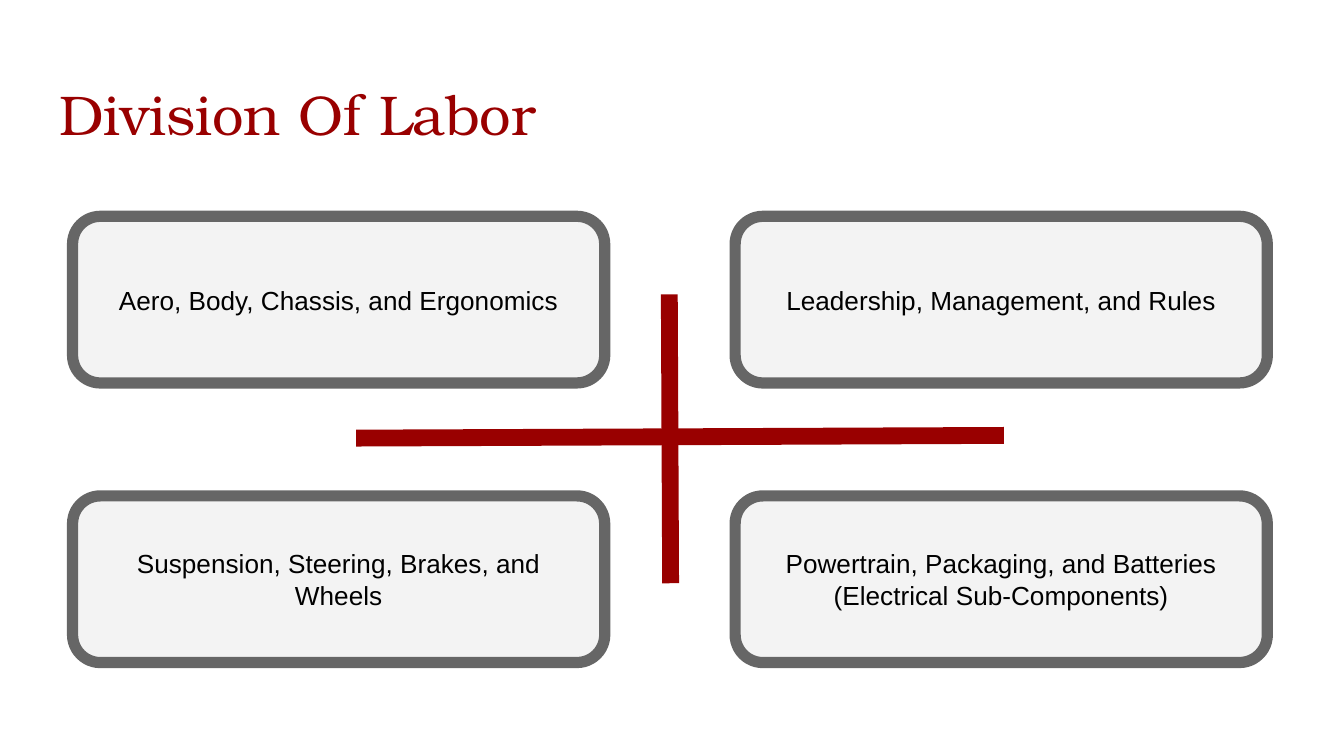
from itertools import product

from lxml.etree import SubElement
from pptx import Presentation
from pptx.dml.color import RGBColor
from pptx.enum.shapes import MSO_CONNECTOR, MSO_SHAPE
from pptx.enum.text import MSO_ANCHOR, MSO_AUTO_SIZE, PP_ALIGN
from pptx.oxml.ns import qn
from pptx.util import Inches, Pt

CRIMSON = RGBColor(0x99, 0x00, 0x00)
GRAY = RGBColor(0x66, 0x66, 0x66)
PALE = RGBColor(0xF3, 0xF3, 0xF3)
BLACK = RGBColor(0x00, 0x00, 0x00)

COLUMNS, ROWS = 100, 56.25
CELL = Inches(0.1)

TEAMS = [
    ["Aero, Body, Chassis, and Ergonomics"],
    ["Leadership, Management, and Rules"],
    ["Suspension, Steering, Brakes, and Wheels"],
    ["Powertrain, Packaging, and Batteries", "(Electrical Sub-Components)"],
]
TEAM_LEFTS = (5.4, 54.7)
TEAM_TOPS = (16.1, 36.9)


def cells(*counts):
    """Turn counts of grid cells into lengths."""
    return [round(count * CELL) for count in counts]


def write(frame, lines, *, font, size, color, align, anchor):
    frame.word_wrap = True
    frame.auto_size = MSO_AUTO_SIZE.NONE
    frame.vertical_anchor = anchor
    frame.margin_left = frame.margin_right = CELL
    frame.margin_top = frame.margin_bottom = CELL
    for index, line in enumerate(lines):
        para = frame.add_paragraph() if index else frame.paragraphs[0]
        para.alignment = align
        span = para.add_run()
        span.text = line
        span.font.name = font
        span.font.size = Pt(size)
        span.font.color.rgb = color


class SlideBuilder:
    """Style and current slide; positions are in grid columns and rows."""

    title_font = "TeX Gyre Bonum"
    body_font = "Arial"

    def __init__(self, deck):
        self.page = deck.slides.add_slide(deck.slide_layouts[5])

    def title(self, text, left, top, width, height):
        box = self.page.shapes.title
        box.left, box.top, box.width, box.height = cells(left, top, width, height)
        write(box.text_frame, [text], font=self.title_font, size=30,
              color=CRIMSON, align=PP_ALIGN.LEFT, anchor=MSO_ANCHOR.TOP)

    def card(self, lines, left, top, width=39.6, height=12.4):
        box = self.page.shapes.add_shape(
            MSO_SHAPE.ROUNDED_RECTANGLE, *cells(left, top, width, height))
        box.shadow.inherit = False
        box.fill.solid()
        box.fill.fore_color.rgb = PALE
        box.line.color.rgb = GRAY
        box.line.width = Pt(6)
        write(box.text_frame, lines, font=self.body_font, size=14,
              color=BLACK, align=PP_ALIGN.CENTER, anchor=MSO_ANCHOR.MIDDLE)

    def divider(self, start, end):
        line = self.page.shapes.add_connector(
            MSO_CONNECTOR.STRAIGHT, *cells(*start, *end))
        line.line.color.rgb = CRIMSON
        line.line.width = Pt(9)
        SubElement(line._element.spPr, qn("a:effectLst"))


def main():
    deck = Presentation()
    deck.slide_width, deck.slide_height = cells(COLUMNS, ROWS)
    slide = SlideBuilder(deck)
    slide.title("Division Of Labor", 3.4, 4.9, 93.2, 6.3)
    for lines, (top, left) in zip(TEAMS, product(TEAM_TOPS, TEAM_LEFTS)):
        slide.card(lines, left, top)
    slide.divider((49.8, 21.9), (49.9, 43.4))
    slide.divider((26.5, 32.6), (74.7, 32.4))
    deck.save("out.pptx")


if __name__ == "__main__":
    main()
